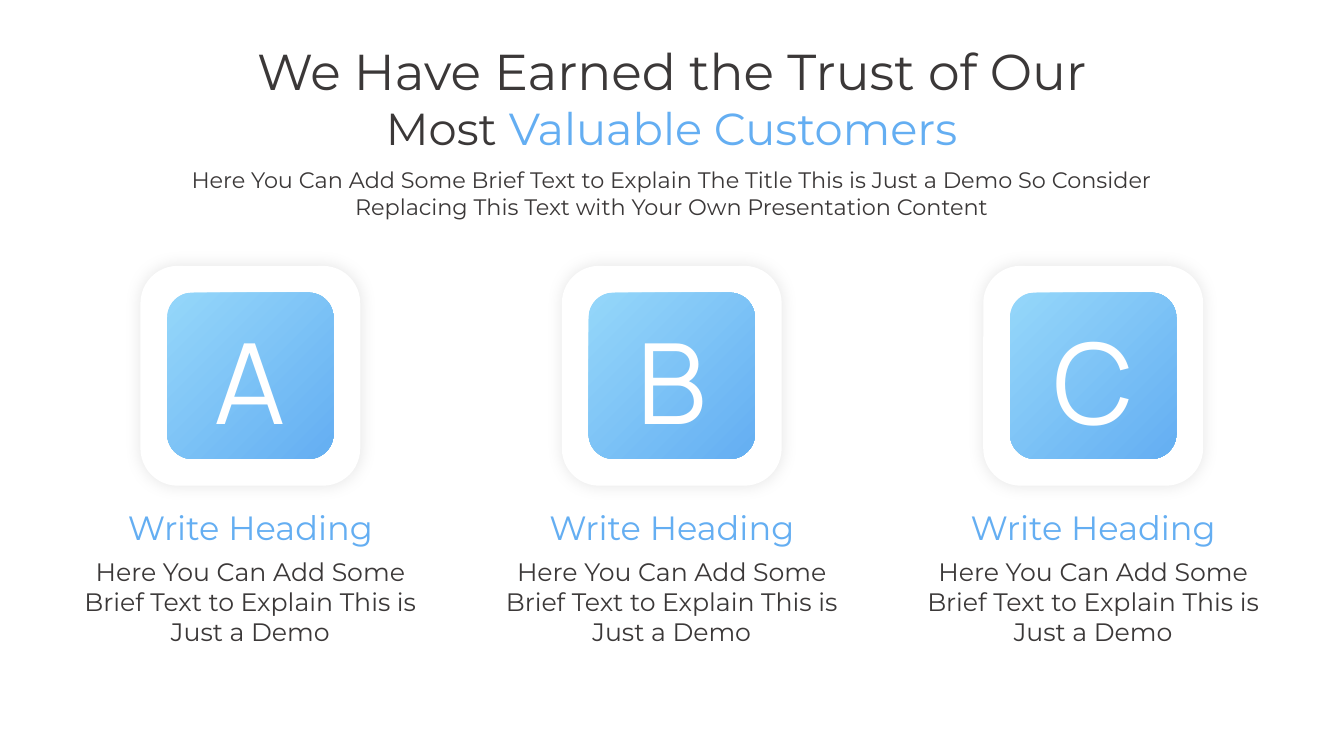
from lxml.etree import SubElement
from pptx import Presentation
from pptx.dml.color import RGBColor
from pptx.enum.shapes import MSO_SHAPE as SHAPE
from pptx.enum.text import MSO_ANCHOR as ANCHOR, MSO_AUTO_SIZE as AUTO, PP_ALIGN as ALIGN
from pptx.oxml import parse_xml
from pptx.oxml.ns import nsdecls, qn
from pptx.util import Cm, Pt

DARK = RGBColor(0x3B, 0x38, 0x38)
BLUE = RGBColor(0x64, 0xAE, 0xF2)
SKY = RGBColor(0x95, 0xD7, 0xFA)
WHITE = RGBColor(0xFF, 0xFF, 0xFF)
FONT, LETTER_FONT = "Montserrat", "Manrope"

MIDDLE = 16.93
PITCH = 10.62
CARD_MIDDLE_Y = 9.47
BODY = "Here You Can Add Some Brief Text to Explain This is Just a Demo"
CUSTOMERS = [(letter, "Write Heading", BODY) for letter in "ABC"]


def place(sp, x, top, width, height):
    """Centre a shape horizontally on x; all lengths in centimetres."""
    sp.left, sp.top = Cm(x - width / 2), Cm(top)
    sp.width, sp.height = Cm(width), Cm(height)


def add_run(p, text, size, color, font=FONT):
    r = p.add_run()
    r.text = text
    r.font.size, r.font.name = Pt(size), font
    r.font.color.rgb = color


def add_text(s, x, top, width, height, text, size, color, font=FONT):
    tf = s.shapes.add_textbox(0, 0, 0, 0)
    place(tf, x, top, width, height)
    tf = tf.text_frame
    tf.word_wrap = True
    tf.auto_size = AUTO.SHAPE_TO_FIT_TEXT
    p = tf.paragraphs[0]
    p.alignment = ALIGN.CENTER
    add_run(p, text, size, color, font)


def add_rounded_square(s, x, size, corner):
    sp = s.shapes.add_shape(SHAPE.ROUNDED_RECTANGLE, 0, 0, 0, 0)
    place(sp, x, CARD_MIDDLE_Y - size / 2, size, size)
    sp.adjustments[0] = corner
    sp.shadow.inherit = False
    sp.line.fill.background()
    return sp


def add_soft_shadow(sp):
    effects = sp._element.spPr.find(qn("a:effectLst"))
    shadow = SubElement(effects, qn("a:outerShdw"), blurRad=str(Pt(12)),
                        dist="0", algn="ctr", rotWithShape="0")
    color = SubElement(shadow, qn("a:srgbClr"), val="000000")
    SubElement(color, qn("a:alpha"), val="10000")


def fill_from_corner(sp):
    """Fill with a radial gradient that starts at the bottom right corner."""
    sp.fill.background()
    no_fill = sp._element.spPr.find(qn("a:noFill"))
    gradient = parse_xml(
        f'<a:gradFill {nsdecls("a")} rotWithShape="1"><a:gsLst>'
        f'<a:gs pos="0"><a:srgbClr val="{BLUE}"/></a:gs>'
        f'<a:gs pos="100000"><a:srgbClr val="{SKY}"/></a:gs></a:gsLst>'
        '<a:path path="circle"><a:fillToRect l="100000" t="100000"/></a:path>'
        '</a:gradFill>')
    no_fill.getparent().replace(no_fill, gradient)


def add_customer(s, x, letter, heading, body):
    card = add_rounded_square(s, x, 5.54, 0.17)
    card.fill.solid()
    card.fill.fore_color.rgb = WHITE
    add_soft_shadow(card)
    fill_from_corner(add_rounded_square(s, x, 4.19, 0.15))
    add_text(s, x, 7.75, 3, 3.68, letter, 80, WHITE, LETTER_FONT)
    add_text(s, x, 12.65, 11.05, 1.27, heading, 24, BLUE)
    add_text(s, x, 13.89, 9.78, 2.57, body, 18, DARK)


def set_title(s):
    title = s.shapes.title
    place(title, MIDDLE, 0.89, 23.16, 3.18)
    tf = title.text_frame
    tf.word_wrap = False
    tf.auto_size = AUTO.SHAPE_TO_FIT_TEXT
    tf.vertical_anchor = ANCHOR.TOP
    first, second = tf.paragraphs[0], tf.add_paragraph()
    first.alignment = second.alignment = ALIGN.CENTER
    add_run(first, "We Have Earned the Trust of Our", 36, DARK)
    add_run(second, "Most ", 32, DARK)
    add_run(second, "Valuable Customers", 32, BLUE)


def main():
    prs = Presentation()
    prs.slide_width, prs.slide_height = Cm(33.87), Cm(19.05)
    s = prs.slides.add_slide(prs.slide_layouts[5])
    set_title(s)
    add_text(s, MIDDLE, 4.06, 25.58, 1.63,
             "Here You Can Add Some Brief Text to Explain The Title This is Just a Demo "
             "So Consider Replacing This Text with Your Own Presentation Content", 16, DARK)
    for i, customer in enumerate(CUSTOMERS):
        add_customer(s, MIDDLE + (i - 1) * PITCH, *customer)
    prs.save("out.pptx")


if __name__ == "__main__":
    main()
